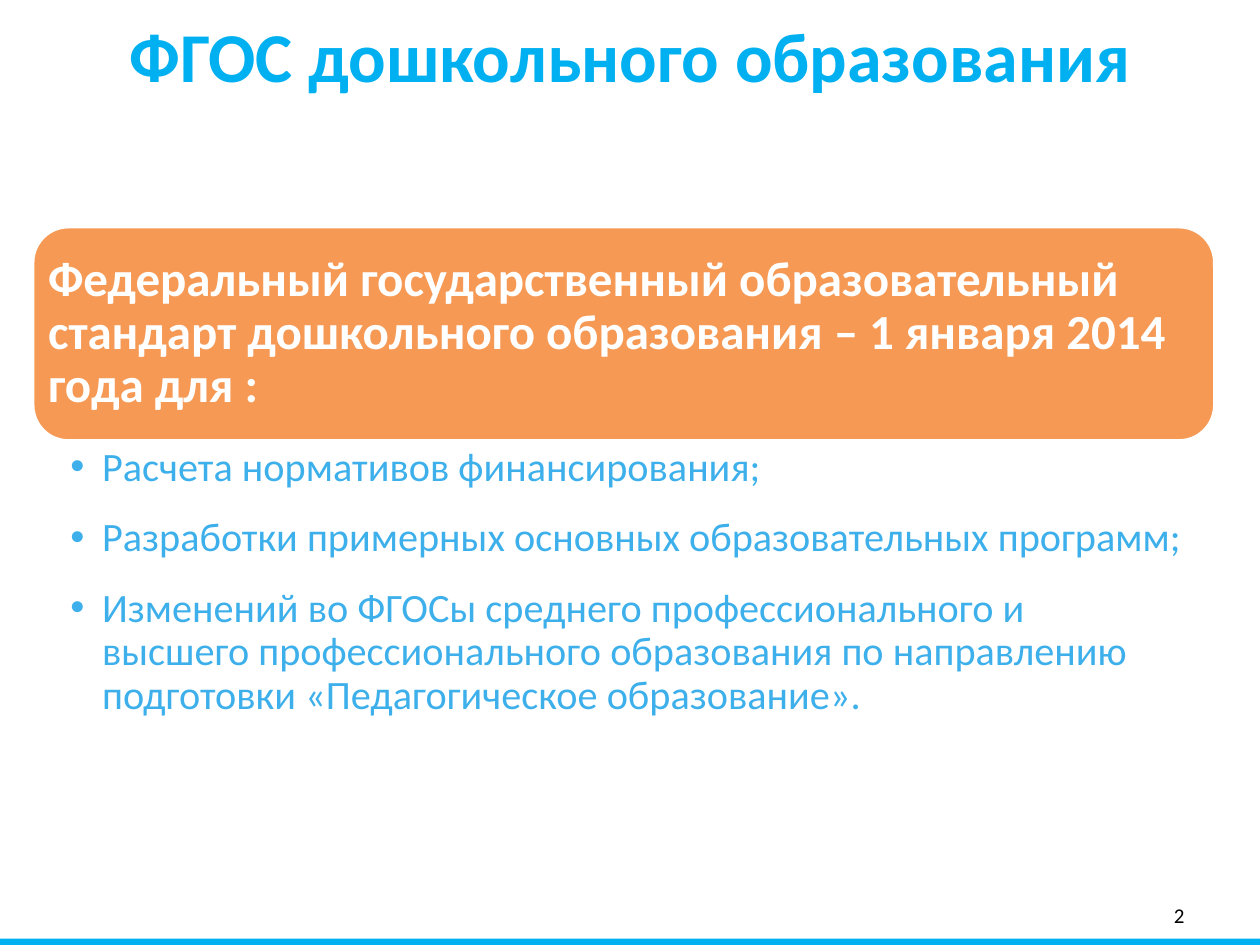
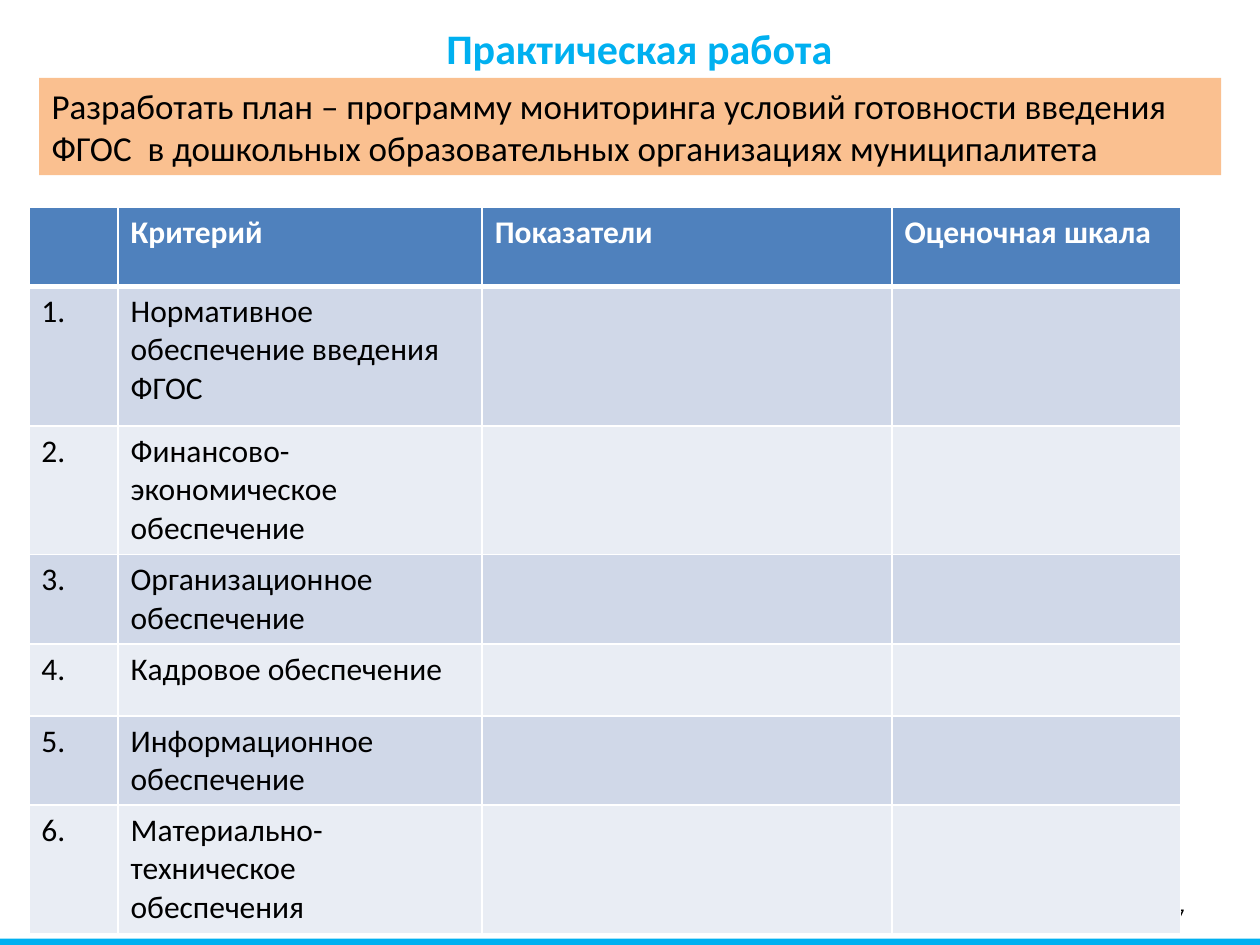
from lxml.etree import SubElement
from pptx import Presentation
from pptx.dml.color import RGBColor
from pptx.enum.shapes import MSO_SHAPE
from pptx.enum.text import MSO_ANCHOR, PP_ALIGN
from pptx.oxml.ns import qn
from pptx.util import Cm, Pt

COLORS = {
    "accent": "00B0F0",
    "banner": "F69954",
    "bullet": "3DB0EB",
    "task": "FAC090",
    "header": "4F81BD",
    "odd": "D0D8E8",
    "even": "E9EDF4",
    "white": "FFFFFF",
    "black": "000000",
}
FONT = "Calibri"
SLIDE_WIDTH, SLIDE_HEIGHT = 25.4, 19.05
BAND_HEIGHT = 0.13


def rgb(color):
    return RGBColor.from_string(COLORS[color])


class Deck:
    def __init__(self):
        self.presentation = Presentation()
        self.presentation.slide_width = Cm(SLIDE_WIDTH)
        self.presentation.slide_height = Cm(SLIDE_HEIGHT)
        self.slide = None

    def new_slide(self, title, title_box, title_size, number):
        self.slide = self.presentation.slides.add_slide(self.presentation.slide_layouts[6])
        self.shape(MSO_SHAPE.RECTANGLE,
                   (0, SLIDE_HEIGHT - BAND_HEIGHT, SLIDE_WIDTH, BAND_HEIGHT), "accent")
        heading = self.text_box(title_box)
        self.add_text(heading.paragraphs[0], title, title_size, "accent", True, PP_ALIGN.CENTER)
        footer = self.text_box((18.21, 17.93, 5.92, 1.02))
        footer.vertical_anchor = MSO_ANCHOR.MIDDLE
        self.add_text(footer.paragraphs[0], number, 12, "black", align=PP_ALIGN.RIGHT)

    def add_text(self, paragraph, text, size, color, bold=False, align=PP_ALIGN.LEFT):
        paragraph.alignment = align
        run = paragraph.add_run()
        run.text = text
        run.font.name = FONT
        run.font.size = Pt(size)
        run.font.bold = bold
        run.font.color.rgb = rgb(color)

    def shape(self, preset, box, fill, line=None):
        shape = self.slide.shapes.add_shape(preset, *map(Cm, box))
        shape.shadow.inherit = False
        shape.fill.solid()
        shape.fill.fore_color.rgb = rgb(fill)
        if line:
            shape.line.color.rgb = rgb(line)
            shape.line.width = Pt(2)
        else:
            shape.line.fill.background()
        shape.text_frame.word_wrap = True
        return shape.text_frame

    def text_box(self, box):
        frame = self.slide.shapes.add_textbox(*map(Cm, box)).text_frame
        frame.word_wrap = True
        return frame

    def bullets(self, box, items, size, color):
        frame = self.text_box(box)
        frame.margin_left, frame.margin_right = Cm(0.76), Cm(0.46)
        frame.margin_top = frame.margin_bottom = Cm(0.08)
        for index, item in enumerate(items):
            paragraph = frame.add_paragraph() if index else frame.paragraphs[0]
            properties = paragraph._p.get_or_add_pPr()
            properties.set("marL", str(Cm(0.64)))
            properties.set("indent", str(-Cm(0.64)))
            SubElement(properties, qn("a:buFont"), typeface="Arial")
            SubElement(properties, qn("a:buChar"), char="•")
            paragraph.line_spacing = 0.9
            paragraph.space_after = Pt(15.5)
            self.add_text(paragraph, item, size, color)

    def table(self, left, top, widths, heights, rows):
        frame = self.slide.shapes.add_table(
            len(rows), len(widths), Cm(left), Cm(top), Cm(sum(widths)), Cm(sum(heights)))
        grid = frame.table
        for column, width in zip(grid.columns, widths):
            column.width = Cm(width)
        for row, height in zip(grid.rows, heights):
            row.height = Cm(height)
        for row_index, texts in enumerate(rows):
            header = row_index == 0
            fill = "header" if header else ("even", "odd")[row_index % 2]
            for column_index, text in enumerate(texts):
                cell = grid.cell(row_index, column_index)
                self.borders(cell, top=3 if row_index == 1 else 1, bottom=3 if header else 1)
                cell.fill.solid()
                cell.fill.fore_color.rgb = rgb(fill)
                if text:
                    self.add_text(cell.text_frame.paragraphs[0], text, 18,
                                  "white" if header else "black", header)

    def borders(self, cell, top, bottom):
        properties = cell._tc.get_or_add_tcPr()
        for side, width in (("L", 1), ("R", 1), ("T", top), ("B", bottom)):
            line = SubElement(properties, qn(f"a:ln{side}"), w=str(Pt(width)))
            SubElement(SubElement(line, qn("a:solidFill")), qn("a:srgbClr"), val=COLORS["white"])


def standard_slide(deck):
    deck.new_slide("ФГОС дошкольного образования", (1.27, 0.13, 22.86, 3.18), 40, "2")
    banner = deck.shape(MSO_SHAPE.ROUNDED_RECTANGLE, (0.66, 4.57, 23.83, 4.32), "banner", "white")
    banner.margin_left = banner.margin_right = Cm(0.1)
    banner.vertical_anchor = MSO_ANCHOR.MIDDLE
    banner.paragraphs[0].line_spacing = 0.9
    deck.add_text(
        banner.paragraphs[0],
        "Федеральный государственный образовательный стандарт дошкольного образования "
        "– 1 января 2014 года для :", 28, "white", True)
    deck.bullets((0.66, 8.92, 23.83, 5.79), [
        "Расчета нормативов финансирования;",
        "Разработки примерных основных образовательных программ;",
        "Изменений во ФГОСы среднего профессионального и  высшего профессионального "
        "образования по направлению подготовки «Педагогическое образование».",
    ], 23, "bullet")


def practice_slide(deck):
    deck.new_slide("Практическая работа", (0.89, 0.33, 24, 3.18), 24, "27")
    criteria = [
        "Нормативное обеспечение введения ФГОС",
        "Финансово-экономическое обеспечение",
        "Организационное обеспечение",
        "Кадровое обеспечение",
        "Информационное обеспечение",
        "Материально- техническое обеспечения",
    ]
    rows = [("", "Критерий", "Показатели", "Оценочная шкала")]
    rows += [(f"{number}.", criterion, "", "") for number, criterion in enumerate(criteria, 1)]
    deck.table(0.58, 4.17, (1.8, 7.34, 8.26, 5.82),
               (1.6, 2.82, 2.59, 1.8, 1.45, 1.8, 2.59), rows)
    task = deck.shape(MSO_SHAPE.RECTANGLE, (0.79, 1.57, 23.83, 1.96), "task")
    task.vertical_anchor = MSO_ANCHOR.TOP
    deck.add_text(
        task.paragraphs[0],
        "Разработать план – программу мониторинга условий готовности введения ФГОС  "
        "в дошкольных образовательных организациях муниципалитета", 20, "black")


def main():
    deck = Deck()
    standard_slide(deck)
    practice_slide(deck)
    deck.presentation.save("out.pptx")


if __name__ == "__main__":
    main()
